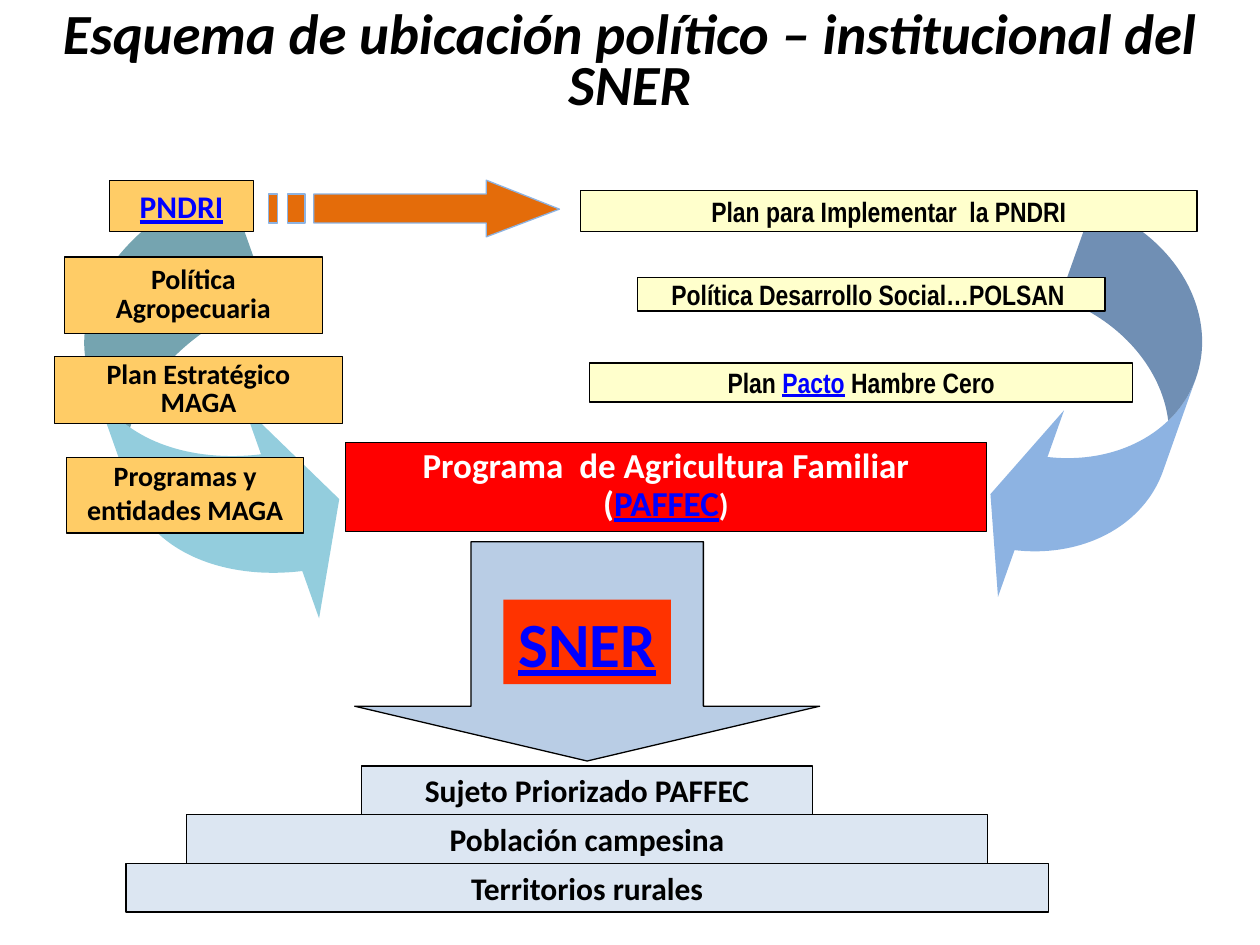
import pptx
import pptx.util
from pptx.dml.color import RGBColor
from pptx.enum.shapes import MSO_SHAPE
from pptx.enum.text import MSO_ANCHOR, PP_ALIGN

WIDTH, HEIGHT = 10, 7.5
COLUMNS, ROWS = 100, 75  # square grid cells

THEME = {
    "ink": "000000", "white": "FFFFFF", "link": "0000FF",
    "orange": "FFCC66", "yellow": "FFFFCC", "red": "FF0000", "badge": "FF3300",
    "tier": "DCE6F2", "down": "B9CDE5", "left": "93CDDD", "right": "8DB3E2",
    "striped": "E46C0A",
    "body": "Calibri", "narrow": "Arial Narrow",
    "title_size": 32.4, "badge_size": 36, "program_size": 20,
    "large": 18, "small": 16, "line": 0.75,
}

# Positions are (column, row, columns wide, rows high)
TITLE = ("Esquema de ubicación político – institucional del SNER", (0, 1.9, 100, 6.5))
AXIS = 46.6  # centre column of the lower half
DOWN_ARROW = (43, 36.9, 17.4)  # top row, columns wide, rows high
TIERS = [("Sujeto Priorizado PAFFEC", 35.8), ("Población campesina", 63.6),
         ("Territorios rurales", 73.2)]
TIER_TOP, TIER_HEIGHT = 60.8, 3.86
BADGE = ("SNER", 47.6, 13.3, 6.7)

CURVED_ARROWS = [
    # place, rotation, mirrored, fill, adjustments
    ((9, 16, 15.4, 35.6), 340.5, False, "left", (0.638, 1.277, 0.303)),
    ((81, 17.4, 12.3, 32.2), 19.5, True, "right", (0.638, 1.277, 0.267)),
]
MAGA_BOXES = [
    # text, place, line spacing, anchor, top and bottom inset in inches
    ("Política Agropecuaria", (5.1, 20.4, 20.5, 6.1), 0.85, MSO_ANCHOR.MIDDLE, 0.05),
    ("Plan Estratégico MAGA", (4.3, 28.3, 22.9, 5.3), 0.85, MSO_ANCHOR.MIDDLE, 0.05),
    ("Programas y entidades MAGA", (5.3, 36.3, 18.8, 6), 1.0, MSO_ANCHOR.TOP, 0.01),
]
PROGRAM_PLACE = (27.4, 35.1, 50.9, 7.1)
PNDRI_PLACE = (8.7, 14.3, 11.4, 4.1)
# Each run is (text, is it a link)
PLANS = [
    ([("Plan para Implementar  la PNDRI", False)], (46.1, 15.1, 48.9, 3.3)),
    ([("Plan ", False), ("Pacto", True), (" Hambre Cero", False)], (46.8, 28.8, 43.1, 3.1)),
    ([("Política Desarrollo Social…POLSAN ", False)], (50.6, 22, 37.1, 2.7)),
]
STRIPES = [(21.3, 22), (22.8, 24.2)]  # left and right columns
SHAFT = (24.9, 38.6, 44.4)  # left, head and tip columns
HEAD_TOP, SHAFT_TOP, TIP_ROW, SHAFT_BOTTOM, HEAD_BOTTOM = 14.3, 15.4, 16.6, 17.7, 18.8

presentation = pptx.Presentation()
presentation.slide_width = pptx.util.Inches(WIDTH)
presentation.slide_height = pptx.util.Inches(HEIGHT)
slide = presentation.slides.add_slide(presentation.slide_layouts[6])


def across(columns):
    return pptx.util.Inches(columns * WIDTH / COLUMNS)


def down(rows):
    return pptx.util.Inches(rows * HEIGHT / ROWS)


def color(name):
    return RGBColor.from_string(THEME[name])


def on_axis(top, width, height):
    return AXIS - width / 2, top, width, height


def paint(shape, fill, line=None):
    shape.shadow.inherit = False
    shape.fill.solid()
    shape.fill.fore_color.rgb = color(fill)
    if line:
        shape.line.color.rgb = color(line)
        shape.line.width = pptx.util.Pt(THEME["line"])
    else:
        shape.line.fill.background()


def add_preset(kind, place, fill, line=None):
    left, top, width, height = place
    shape = slide.shapes.add_shape(kind, across(left), down(top), across(width), down(height))
    paint(shape, fill, line)
    return shape


def write(shape, runs, size, font="body", ink="ink", spacing=1.0, after=0,
          anchor=MSO_ANCHOR.MIDDLE):
    frame = shape.text_frame
    frame.word_wrap = True
    frame.vertical_anchor = anchor
    paragraph = frame.paragraphs[0]
    paragraph.alignment = PP_ALIGN.CENTER
    paragraph.line_spacing = spacing
    paragraph.space_after = pptx.util.Pt(after)
    paragraph.font.name = THEME[font]
    paragraph.font.size = pptx.util.Pt(THEME[size])
    paragraph.font.bold = True
    for text, is_link in runs:
        run = paragraph.add_run()
        run.text = text
        run.font.name = THEME[font]
        run.font.size = pptx.util.Pt(THEME[size])
        run.font.bold = True
        run.font.color.rgb = color("link" if is_link else ink)
        if is_link:
            run.font.underline = True
    return paragraph


def add_box(runs, place, fill, size, line="ink", **style):
    box = add_preset(MSO_SHAPE.RECTANGLE, place, fill, line)
    write(box, runs, size, **style)
    return box


def add_striped_arrow():
    left, head, tip = SHAFT
    outlines = [[(head, HEAD_TOP), (head, SHAFT_TOP), (left, SHAFT_TOP), (left, SHAFT_BOTTOM),
                 (head, SHAFT_BOTTOM), (head, HEAD_BOTTOM), (tip, TIP_ROW)]]
    for start, end in STRIPES:
        outlines.append([(start, SHAFT_TOP), (start, SHAFT_BOTTOM),
                         (end, SHAFT_BOTTOM), (end, SHAFT_TOP)])
    outlines = [[(across(x), down(y)) for x, y in outline] for outline in outlines]
    builder = slide.shapes.build_freeform(*outlines[0][0], scale=1.0)
    for index, outline in enumerate(outlines):
        if index:
            builder.move_to(*outline[0])
        builder.add_line_segments(outline[1:], close=True)
    paint(builder.convert_to_shape(), "striped", "right")


arrow = add_preset(MSO_SHAPE.DOWN_ARROW, on_axis(*DOWN_ARROW), "down", "ink")
arrow.adjustments[0], arrow.adjustments[1] = 0.5, 0.25

for index, (text, width) in enumerate(TIERS):
    place = on_axis(TIER_TOP + index * TIER_HEIGHT, width, TIER_HEIGHT)
    add_box([(text, False)], place, "tier", "large", after=10)

for place, rotation, mirrored, fill, adjustments in CURVED_ARROWS:
    arrow = add_preset(MSO_SHAPE.CURVED_RIGHT_ARROW, place, fill)
    arrow.rotation = rotation
    for index, value in enumerate(adjustments):
        arrow.adjustments[index] = value
    if mirrored:
        arrow.element.spPr.xfrm.set("flipH", "1")

for text, place, spacing, anchor, inset in MAGA_BOXES:
    box = add_box([(text, False)], place, "orange", "small", spacing=spacing, anchor=anchor)
    box.text_frame.margin_top = box.text_frame.margin_bottom = pptx.util.Inches(inset)

text, (left, top, width, height) = TITLE
title = slide.shapes.add_textbox(across(left), down(top), across(width), down(height))
paragraph = write(title, [(text, False)], "title_size", spacing=0.75)
paragraph.runs[0].font.italic = True

program = add_box([("Programa  de Agricultura Familiar (", False), ("PAFFEC", True), (")", False)],
                  PROGRAM_PLACE, "red", "program_size", ink="white", spacing=0.9,
                  anchor=MSO_ANCHOR.TOP)
program.text_frame.paragraphs[0].runs[-1].font.size = pptx.util.Pt(THEME["large"])

add_box([("PNDRI", True)], PNDRI_PLACE, "orange", "large", after=10)
for runs, place in PLANS:
    add_box(runs, place, "yellow", "small", font="narrow", after=10)
add_striped_arrow()

text, *badge_place = BADGE
add_box([(text, True)], on_axis(*badge_place), "badge", "badge_size", line=None, after=10)

presentation.save("out.pptx")
